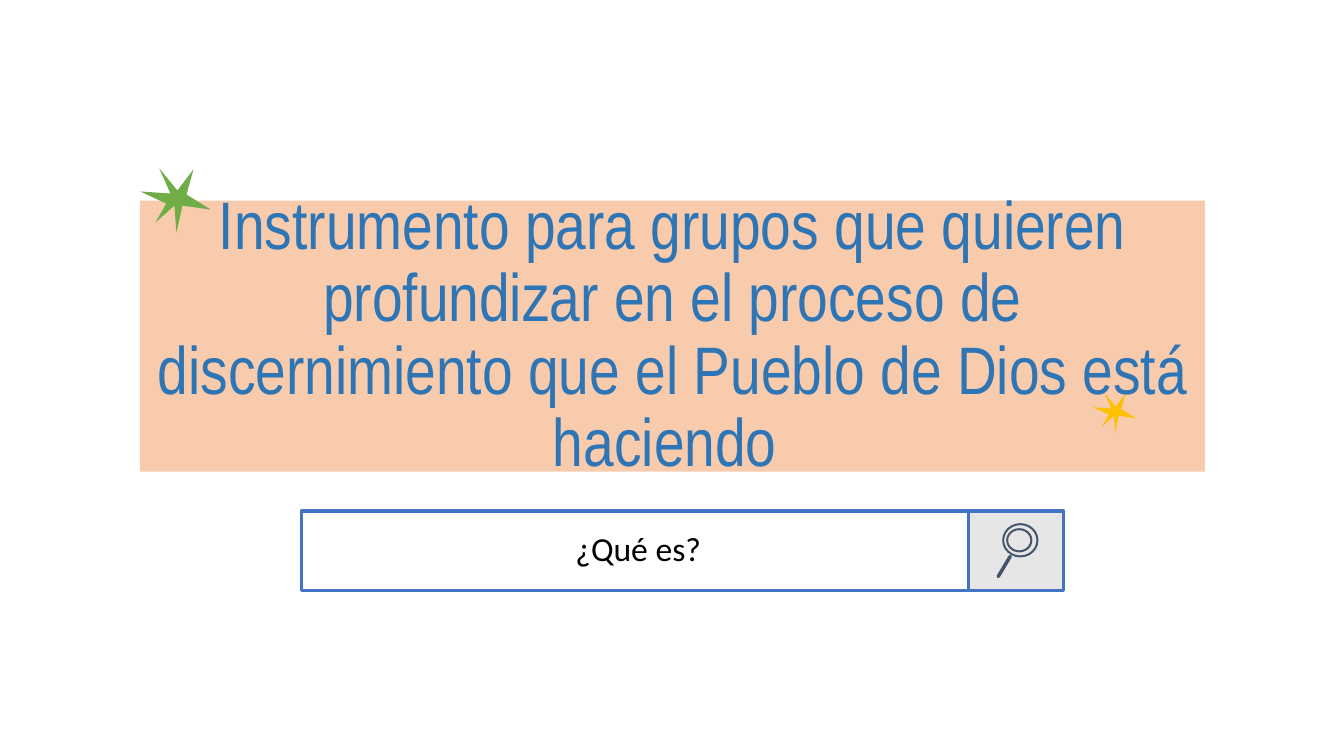
from pptx import Presentation
from pptx.dml.color import RGBColor
from pptx.enum import shapes, text
from pptx.oxml import parse_xml
from pptx.oxml.ns import nsdecls
from pptx.util import Inches, Pt

WHITE = RGBColor(0xFF, 0xFF, 0xFF)
BLACK = RGBColor(0x00, 0x00, 0x00)
PEACH = RGBColor(0xF8, 0xCB, 0xAD)
TITLE_BLUE = RGBColor(0x2E, 0x75, 0xB6)
BORDER_BLUE = RGBColor(0x44, 0x72, 0xC4)
LIGHT_GREY = RGBColor(0xE7, 0xE6, 0xE6)
SLATE = RGBColor(0x44, 0x54, 0x6A)
GREEN = RGBColor(0x70, 0xAD, 0x47)
GOLD = RGBColor(0xFF, 0xC0, 0x00)

# Star outline in hundredths of an inch from its top left corner
STAR = [(19, 0), (30, 25), (0, 23), (26, 35), (15, 54), (34, 37),
        (36, 64), (42, 37), (70, 41), (46, 26), (53, 1), (37, 22)]


def paint(shape, fill, line=None):
    shape.shadow.inherit = False
    if fill is None:
        shape.fill.background()
    else:
        shape.fill.solid()
        shape.fill.fore_color.rgb = fill
    if line is None:
        shape.line.fill.background()
    else:
        shape.line.color.rgb = line
        shape.line.width = Pt(2.25)


def write(shape, wording, font, size, color):
    frame = shape.text_frame
    frame.word_wrap = True
    frame.vertical_anchor = text.MSO_ANCHOR.MIDDLE
    frame.margin_left = frame.margin_right = 0
    frame.margin_top = frame.margin_bottom = 0
    paragraph = frame.paragraphs[0]
    paragraph.alignment = text.PP_ALIGN.CENTER
    paragraph.line_spacing = 0.9
    run = paragraph.add_run()
    run.text = wording
    run.font.name = font
    run.font.size = Pt(size)
    run.font.color.rgb = color


prs = Presentation()
prs.slide_width = Inches(13.33)
prs.slide_height = Inches(7.5)
slide = prs.slides.add_slide(prs.slide_layouts[6])
slide.background.fill.solid()
slide.background.fill.fore_color.rgb = WHITE
RECT = shapes.MSO_SHAPE.RECTANGLE

# Search bar and title
search_bar = slide.shapes.add_shape(
    RECT, Inches(2.99), Inches(5.07), Inches(6.68), Inches(0.79))
paint(search_bar, None, BORDER_BLUE)
write(search_bar, "¿Qué es?", "Calibri", 24, BLACK)

title = slide.shapes.add_shape(
    RECT, Inches(1.39), Inches(1.99), Inches(10.56), Inches(2.69))
paint(title, PEACH)
write(title, "Instrumento para grupos que quieren profundizar en el proceso de "
      "discernimiento que el Pueblo de Dios está haciendo ",
      "Arial Narrow", 48, TITLE_BLUE)

search_button = slide.shapes.add_shape(
    RECT, Inches(9.61), Inches(5.07), Inches(0.94), Inches(0.79))
paint(search_button, LIGHT_GREY, BORDER_BLUE)

# Magnifying glass: two rings and a handle
for left, top, width, height in [(9.94, 5.19, 0.36, 0.34), (9.98, 5.24, 0.26, 0.24)]:
    ring = slide.shapes.add_shape(
        shapes.MSO_SHAPE.DONUT, Inches(left), Inches(top), Inches(width), Inches(height))
    ring.adjustments[0] = 0.02 / height
    paint(ring, SLATE)

handle = slide.shapes.add_connector(
    shapes.MSO_CONNECTOR.STRAIGHT, Inches(10.02), Inches(5.52), Inches(9.9), Inches(5.72))
handle.line.color.rgb = SLATE
handle.line.width = Pt(2.5)
handle.line._get_or_add_ln().set("cap", "rnd")
handle._element.spPr.append(parse_xml(f"<a:effectLst {nsdecls('a')}/>"))

# Stars
for left, top, size, color in [(1.39, 1.67, 1, GREEN), (10.84, 3.9, 0.61, GOLD)]:
    outline = slide.shapes.build_freeform(*STAR[0], scale=Inches(0.01 * size))
    outline.add_line_segments(STAR[1:], close=True)
    paint(outline.convert_to_shape(Inches(left), Inches(top)), color)

prs.save("out.pptx")
